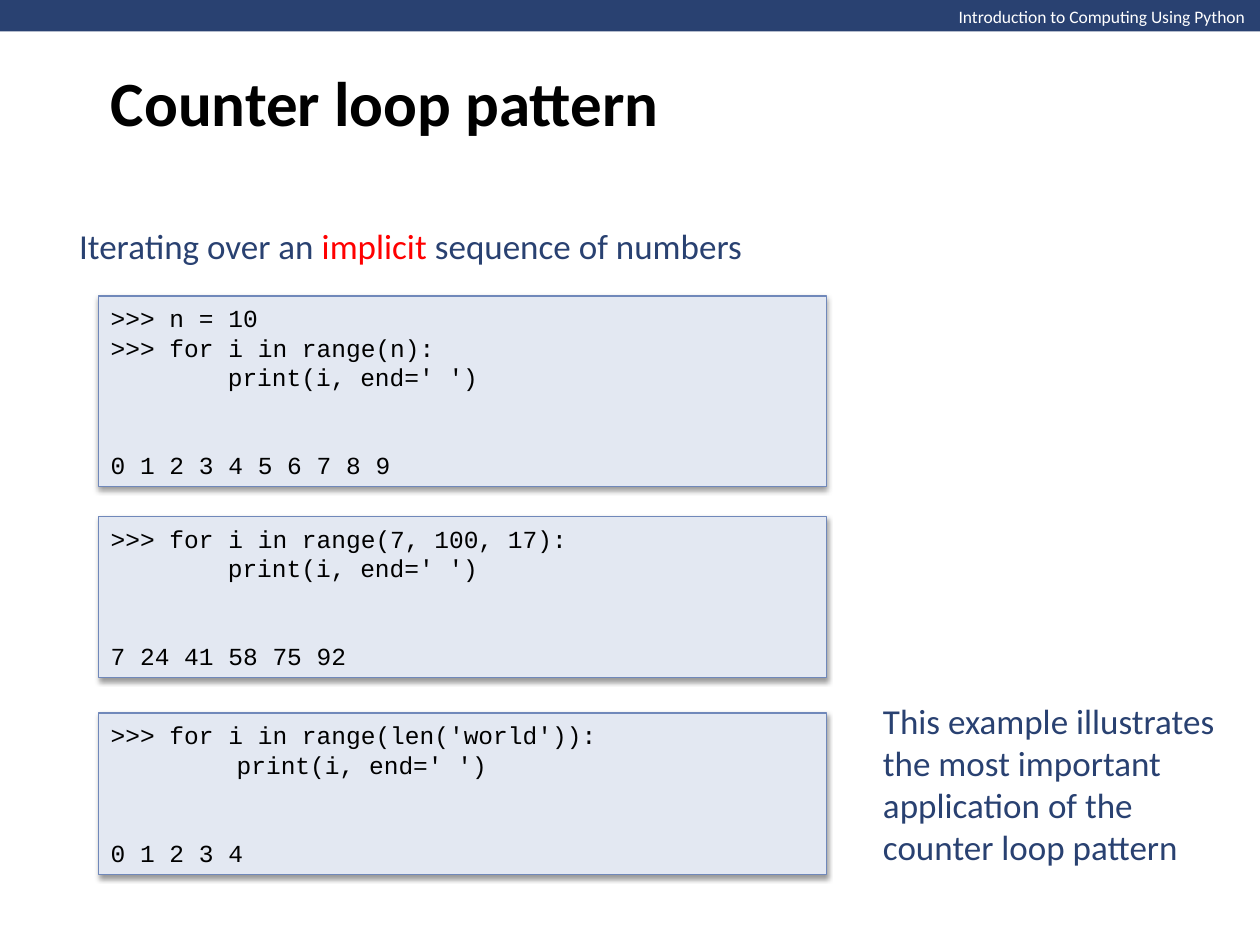
from dataclasses import dataclass
from typing import Any, NamedTuple

from pptx import Presentation
from pptx.dml.color import RGBColor
from pptx.enum.shapes import MSO_SHAPE
from pptx.enum.text import MSO_ANCHOR, MSO_AUTO_SIZE, PP_ALIGN
from pptx.oxml import parse_xml
from pptx.oxml.ns import nsdecls
from pptx.util import Inches, Pt


@dataclass(frozen=True)
class Theme:
    navy: RGBColor = RGBColor(0x29, 0x41, 0x71)
    red: RGBColor = RGBColor(0xFF, 0x00, 0x00)
    black: RGBColor = RGBColor(0x00, 0x00, 0x00)
    white: RGBColor = RGBColor(0xFF, 0xFF, 0xFF)
    panel: RGBColor = RGBColor(0xE3, 0xE8, 0xF2)
    border: RGBColor = RGBColor(0x70, 0x88, 0xBA)
    text_font: str = "Calibri"
    code_font: str = "Courier New"
    header_size: int = 10
    title_size: int = 36
    body_size: int = 20
    code_size: int = 14
    output_gap: float = 33.5


THEME = Theme()


class Area(NamedTuple):
    left: float
    top: float
    width: float
    height: float

    def lengths(self) -> list[int]:
        return [Inches(value) for value in self]


class Span(NamedTuple):
    text: str
    color: RGBColor


class Example(NamedTuple):
    top: float
    height: float
    statements: list[str]
    body: str
    indent: float
    output: str


EXAMPLES = [
    Example(2.35, 1.51, [">>> n = 10", ">>> for i in range(n):"],
            "print(i, end=' ')", 0.93, "0 1 2 3 4 5 6 7 8 9"),
    Example(4.1, 1.28, [">>> for i in range(7, 100, 17):"],
            "print(i, end=' ')", 0.93, "7 24 41 58 75 92"),
    Example(5.66, 1.28, [">>> for i in range(len('world')):"],
            "print(i, end=' ')", 1, "0 1 2 3 4"),
]


def apply(target: Any, values: dict[str, Any]) -> None:
    for name, value in values.items():
        setattr(target, name, value)


def add_span(para: Any, span: Span, size: int, font: str, bold: bool = False) -> None:
    run = para.add_run()
    run.text = span.text
    apply(run.font, {"name": font, "size": Pt(size), "bold": bold})
    run.font.color.rgb = span.color


def format_frame(frame: Any, anchor: Any = MSO_ANCHOR.MIDDLE, wrap: bool = True) -> None:
    apply(frame, {"word_wrap": wrap, "auto_size": MSO_AUTO_SIZE.NONE,
                  "vertical_anchor": anchor})


def add_label(page: Any, area: Area, spans: list[Span], size: int,
              anchor: Any = MSO_ANCHOR.MIDDLE, wrap: bool = True) -> None:
    box = page.shapes.add_textbox(*area.lengths())
    format_frame(box.text_frame, anchor, wrap)
    for span in spans:
        add_span(box.text_frame.paragraphs[0], span, size, THEME.text_font)


def add_panel(page: Any, area: Area, fill: RGBColor) -> Any:
    panel = page.shapes.add_shape(MSO_SHAPE.RECTANGLE, *area.lengths())
    panel.shadow.inherit = False
    panel.fill.solid()
    panel.fill.fore_color.rgb = fill
    panel.line.fill.background()
    return panel


def add_soft_shadow(panel: Any) -> None:
    effects = panel._element.spPr.find("{*}effectLst")
    effects.append(parse_xml(
        f'<a:outerShdw {nsdecls("a")} blurRad="{Pt(3.1)}" dist="{Pt(1.6)}" '
        'dir="5400000" rotWithShape="0"><a:srgbClr val="000000">'
        '<a:alpha val="38000"/></a:srgbClr></a:outerShdw>'))


def add_example(page: Any, example: Example) -> None:
    panel = add_panel(page, Area(0.78, example.top, 5.78, example.height), THEME.panel)
    panel.line.color.rgb = THEME.border
    panel.line.width = Pt(0.75)
    add_soft_shadow(panel)
    frame = panel.text_frame
    format_frame(frame)
    lines = [*example.statements, example.body, example.output]
    for index, line in enumerate(lines):
        para = frame.add_paragraph() if index else frame.paragraphs[0]
        para.alignment = PP_ALIGN.LEFT
        add_span(para, Span(line, THEME.black), THEME.code_size, THEME.code_font)
    body, output = frame.paragraphs[-2:]
    body._p.get_or_add_pPr().set("marL", str(Inches(example.indent)))
    output.space_before = Pt(THEME.output_gap)


def add_title(page: Any, area: Area, text: str) -> None:
    title = page.shapes.title
    apply(title, dict(zip(("left", "top", "width", "height"), area.lengths())))
    format_frame(title.text_frame)
    para = title.text_frame.paragraphs[0]
    para.alignment = PP_ALIGN.LEFT
    add_span(para, Span(text, THEME.black), THEME.title_size, THEME.text_font, True)


def main() -> None:
    deck = Presentation()
    apply(deck, {"slide_width": Inches(10), "slide_height": Inches(7.5)})
    page = deck.slides.add_slide(deck.slide_layouts.get_by_name("Title Only"))
    add_panel(page, Area(0, 0, 10.01, 0.25), THEME.navy)
    add_label(page, Area(7.51, 0, 2.5, 0.27),
              [Span("Introduction to Computing Using Python", THEME.white)],
              THEME.header_size, MSO_ANCHOR.TOP, False)
    add_title(page, Area(0.78, 0, 8.5, 1.61), "Counter loop pattern")
    add_label(page, Area(0.53, 1.73, 8.93, 0.44),
              [Span("Iterating over an ", THEME.navy), Span("implicit ", THEME.red),
               Span("sequence of numbers", THEME.navy)], THEME.body_size)
    for example in EXAMPLES:
        add_example(page, example)
    add_label(page, Area(6.91, 5.49, 2.9, 1.45),
              [Span("This example illustrates the most important application "
                    "of the counter loop pattern", THEME.navy)], THEME.body_size)
    deck.save("out.pptx")


if __name__ == "__main__":
    main()
